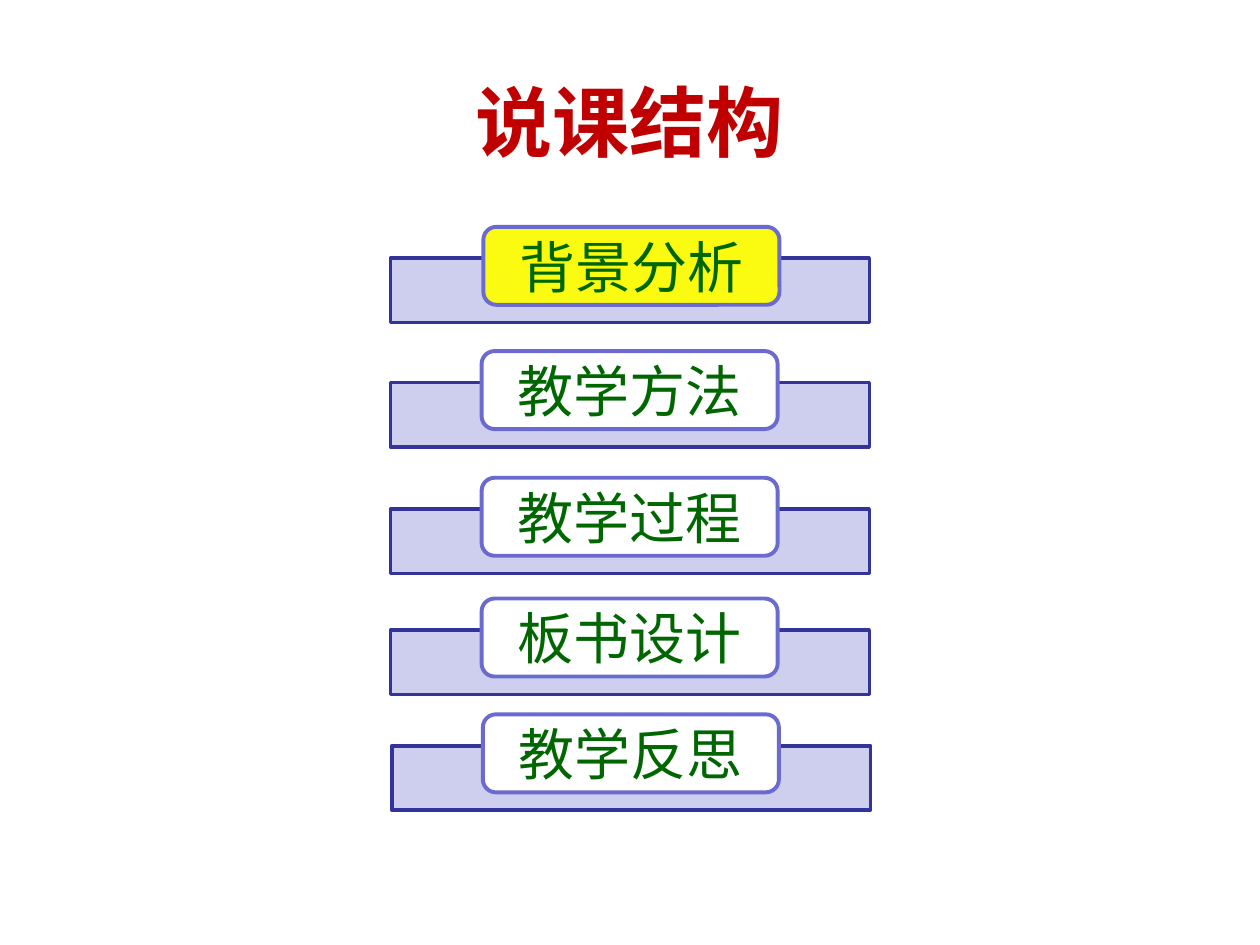
from lxml import etree
from pptx import Presentation
from pptx.dml.color import RGBColor
from pptx.enum import shapes, text
from pptx.oxml.ns import qn
from pptx.util import Pt

HUES = {"title": "C00000", "bar": "CECEEF", "edge": "333399", "card": "FFFFFF",
        "rim": "6B6BCF", "ink": "006600", "now": "FBFB11"}
CJK = "Noto Sans CJK SC"

TITLE = "说课结构"
# label, bar left, bar top, card left, card fill
STEPS = [
    ("背景分析", 223.2, 147.6, 276.2, "now"),
    ("教学方法", 223.2, 218.6, 275.2, "card"),
    ("教学过程", 223.2, 291, 275.2, "card"),
    ("板书设计", 223.2, 360, 275.2, "card"),
    ("教学反思", 223.9, 426.2, 275.9, "card"),
]
BAR_W, BAR_H = 273.6, 36.8
CARD_W, CARD_H, LIFT = 169.2, 44.6, 18


def hue(name):
    return RGBColor.from_string(HUES[name])


def write(shape, words, size, font, ink, bold=False):
    frame = shape.text_frame
    frame.text = words
    frame.word_wrap = True
    frame.vertical_anchor = text.MSO_ANCHOR.MIDDLE
    frame.margin_top = frame.margin_bottom = 0
    para = frame.paragraphs[0]
    para.alignment = text.PP_ALIGN.CENTER
    run = para.runs[0]
    run.font.size, run.font.name, run.font.bold = Pt(size), font, bold
    run.font.color.rgb = hue(ink)
    east = etree.SubElement(run.font._element, qn("a:ea"))
    east.set("typeface", CJK)


def block(group, kind, box, fill, line, width):
    shape = group.shapes.add_shape(kind, *map(Pt, box))
    shape.shadow.inherit = False
    shape.fill.solid()
    shape.fill.fore_color.rgb = hue(fill)
    shape.line.color.rgb = hue(line)
    shape.line.width = Pt(width)
    return shape


def main():
    deck = Presentation()
    deck.slide_width, deck.slide_height = Pt(720), Pt(540)
    slide = deck.slides.add_slide(deck.slide_layouts[6])

    head = slide.shapes.add_textbox(Pt(79.2), Pt(35.3), Pt(561.6), Pt(67.7))
    write(head, TITLE, 44, "Arial", "title", bold=True)

    kinds = shapes.MSO_SHAPE
    for label, left, top, card_x, fill in STEPS:
        group = slide.shapes.add_group_shape()
        block(group, kinds.RECTANGLE, (left, top, BAR_W, BAR_H), "bar", "edge", 2)
        card = block(group, kinds.ROUNDED_RECTANGLE,
                     (card_x, top - LIFT, CARD_W, CARD_H), fill, "rim", 2.25)
        write(card, label, 32, CJK, "ink")

    deck.save("out.pptx")


if __name__ == "__main__":
    main()
